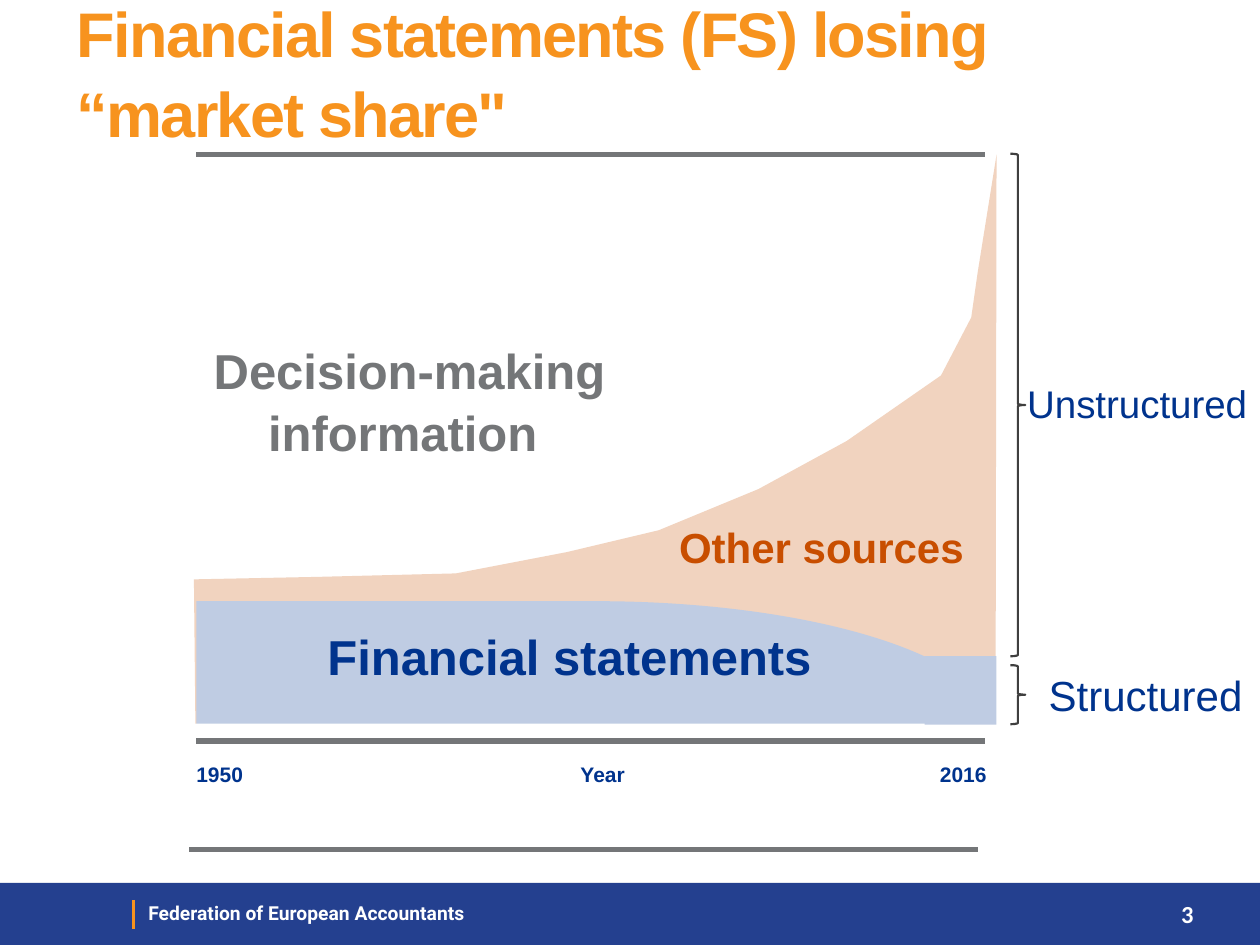
from pptx import Presentation
from pptx import util as u
from pptx.dml import color
from pptx.enum import shapes, text
from pptx.oxml import xmlchemy

Cm, Pt = u.Cm, u.Pt
KIND, ALIGN, ANCHOR = shapes.MSO_SHAPE, text.PP_ALIGN, text.MSO_ANCHOR

THEME = {
    "colour": {
        name: color.RGBColor.from_string(value)
        for name, value in {
            "white": "FFFFFF", "band": "24408F", "orange": "F7931E",
            "peach": "F1D3BF", "sky": "BFCCE3", "grey": "747678",
            "rust": "C84E00", "navy": "00338D", "dark": "3F3F3F",
        }.items()
    },
    "size": {
        "title": 36, "area": 28, "label": 24, "bracket": 22,
        "number": 14, "axis": 12, "footer": 11,
    },
}
COLOUR = THEME["colour"]


def add_block(kind, place, fill=None, outline=None):
    """Add a preset shape with either a plain fill or a thin outline."""
    block = page.shapes.add_shape(kind, *map(Cm, place))
    block.shadow.inherit = False
    if fill:
        block.fill.solid()
        block.fill.fore_color.rgb = COLOUR[fill]
        block.line.fill.background()
    else:
        block.fill.background()
        block.line.color.rgb = COLOUR[outline]
        block.line.width = Pt(1.25)


def add_label(words, place, size, tint, bold=True, face="Arial",
              align=ALIGN.CENTER, anchor=ANCHOR.MIDDLE, inset=0, spacing=None):
    """Add a wrapped text box and return its paragraph."""
    box = page.shapes.add_textbox(*map(Cm, place))
    frame = box.text_frame
    frame_format = {
        "word_wrap": True, "vertical_anchor": anchor,
        "margin_top": Cm(inset), "margin_bottom": Cm(inset),
    }
    for name, value in frame_format.items():
        setattr(frame, name, value)
    para = frame.paragraphs[0]
    para.text = words
    para.alignment = align
    para.line_spacing = spacing
    font_format = {"name": face, "size": Pt(THEME["size"][size]), "bold": bold}
    for span in para.runs:
        for name, value in font_format.items():
            setattr(span.font, name, value)
        span.font.color.rgb = COLOUR[tint]
    return para


deck = Presentation()
deck.slide_width, deck.slide_height = Cm(25.4), Cm(19.05)
page = deck.slides.add_slide(deck.slide_layouts[6])

# Footer band
add_block(KIND.RECTANGLE, (0, 17.8, 25.4, 1.25), fill="band")
add_label("Federation of European Accountants", (2.74, 18.03, 9.4, 0.74),
          "footer", "white", face="Roboto", align=ALIGN.LEFT,
          anchor=ANCHOR.TOP, inset=0.13)
add_label("3", (22.71, 17.8, 1.6, 1.25), "number", "white",
          face="Calibri", align=ALIGN.RIGHT, inset=0.13)

# Area of other sources, in hundredths of a centimetre
outline = [
    (394, 1463), (2007, 1466), (2009, 312), (1971, 549), (1958, 640),
    (1897, 757), (1707, 889), (1529, 986), (1328, 1069), (1143, 1113),
    (919, 1156), (640, 1163), (391, 1168),
]
builder = page.shapes.build_freeform(*outline[0], scale=Cm(1) / 100)
builder.add_line_segments(outline[1:], close=True)
other_sources = builder.convert_to_shape()
other_sources.shadow.inherit = False
other_sources.fill.solid()
other_sources.fill.fore_color.rgb = COLOUR["peach"]
other_sources.line.fill.background()

# Area of financial statements: curve, cover of its lower half, flat end
add_block(KIND.FLOWCHART_DELAY, (3.96, 12.12, 16.13, 5.2), fill="sky")
add_block(KIND.RECTANGLE, (3.91, 14.59, 16.79, 3), fill="white")
add_block(KIND.RECTANGLE, (18.64, 13.23, 1.45, 1.38), fill="sky")

# Rules and footer divider
rules = [
    ((3.96, 3.12, 19.86, 3.12), "grey", 3),
    ((3.96, 14.94, 19.86, 14.94), "grey", 3),
    ((3.81, 17.12, 19.71, 17.12), "grey", 3),
    ((2.69, 18.14, 2.69, 18.72), "orange", 1.5),
]
for ends, tint, weight in rules:
    rule = page.shapes.add_connector(shapes.MSO_CONNECTOR.STRAIGHT, *map(Cm, ends))
    rule.line.color.rgb = COLOUR[tint]
    rule.line.width = Pt(weight)
    properties = rule._element.spPr
    properties.append(xmlchemy.OxmlElement("a:effectLst"))

# Title
title = add_label("Financial statements (FS) losing “market share\"",
                  (1.3, 0.05, 22.86, 2.74), "title", "orange",
                  align=ALIGN.LEFT, inset=0.13, spacing=1.05)
for span in title.runs:
    span._r.get_or_add_rPr().set("spc", "-100")

# Area labels
add_label("Decision-making\vinformation ", (3.81, 6.78, 8.89, 2.54),
          "area", "grey", spacing=1.05)
add_label("Other sources", (13.26, 10.52, 6.6, 0.99), "label", "rust")
add_label("Financial statements", (6.07, 12.73, 10.82, 0.99), "area", "navy")

# Year axis
for words, left in (("1950", 3.3), ("Year", 11.02), ("2016", 18.29)):
    add_label(words, (left, 15.11, 2.26, 0.99), "axis", "navy")

# Braces and their labels
for top, height in ((3.1, 10.13), (13.41, 1.19)):
    add_block(KIND.RIGHT_BRACE, (20.37, top, 0.3, height), outline="dark")
add_label("Unstructured", (20.37, 6.32, 5.11, 3.61), "bracket", "navy", bold=False)
add_label("Structured", (20.68, 12.19, 4.83, 3.61), "label", "navy", bold=False)

deck.save("out.pptx")
